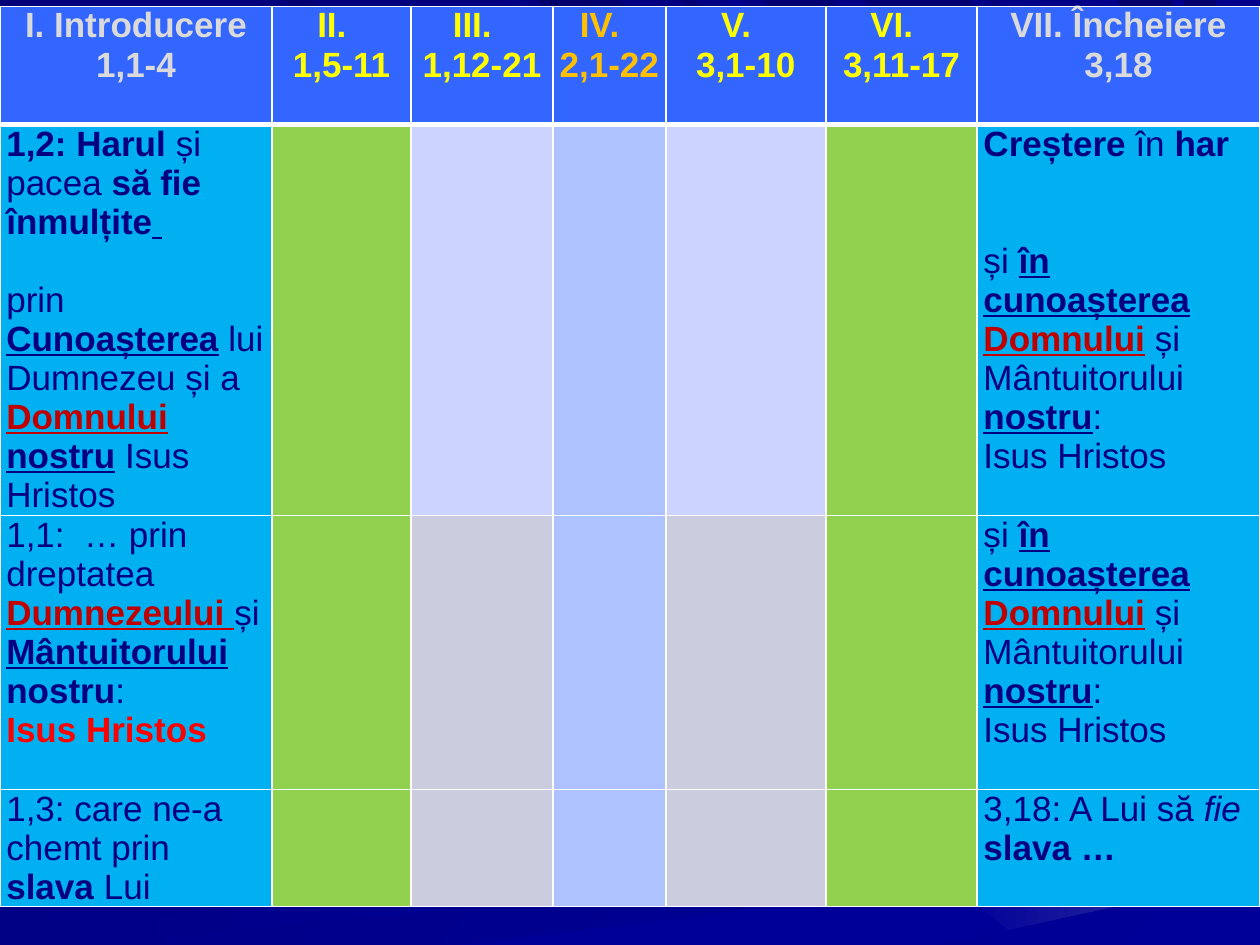
from dataclasses import dataclass

from lxml.etree import SubElement
from pptx import Presentation
from pptx.dml.color import RGBColor
from pptx.enum.text import PP_ALIGN as Align
from pptx.oxml.ns import qn
from pptx.util import Pt


def blue(level: int) -> RGBColor:
    return RGBColor(0, 0, level)


NAVY = blue(0x80)
BRIGHT = blue(0x99)
LAVENDER_GREY = RGBColor(0x39, 0x39, 0x9E)
WHITE = RGBColor(0xFF, 0xFF, 0xFF)
SILVER = RGBColor(0xDA, 0xDA, 0xDA)
YELLOW = RGBColor(0xFF, 0xFF, 0x00)
AMBER = RGBColor(0xFF, 0xC0, 0x00)
CRIMSON = RGBColor(0xC0, 0x00, 0x00)
RED = RGBColor(0xFF, 0x00, 0x00)
HEADER_BLUE = RGBColor(0x33, 0x66, 0xFF)
SKY = RGBColor(0x00, 0xB0, 0xF0)
GREEN = RGBColor(0x92, 0xD0, 0x50)
PALE_BLUE = RGBColor(0xCD, 0xD3, 0xFF)
PALE_GREY = RGBColor(0xCC, 0xCC, 0xDF)
MID_BLUE = RGBColor(0xAD, 0xC2, 0xFF)

FONT = "Arial"
TEXT_SIZE = 20
LINE = 22.35  # height of one text line
COLUMN_WIDTHS = (155.5, 79.5, 81, 64.5, 91.5, 86.5, 161.5)
ROW_HEIGHTS = (67.5, 223.5, 156.5, 67)


@dataclass
class Ray:
    start: RGBColor
    end: RGBColor
    angle: int
    points: list[tuple[float, float]]


@dataclass
class Run:
    text: str
    bold: bool = False
    underline: bool = False
    italic: bool = False
    color: RGBColor = NAVY


@dataclass
class Para:
    runs: list[Run]
    before: float = 0
    align: Align = Align.LEFT


# Background rays that reach past the table
RAYS = [
    Ray(blue(0x7B), BRIGHT, 45, [(415.5, 214.5), (72.7, 0), (18.7, 0), (405.4, 223.2),
                                 (720, 405.4), (720, 404.6)]),
    Ray(blue(0x85), BRIGHT, 0, [(0, 540), (38.9, 540), (452.2, 501.8), (452.2, 496.1), (0, 529.2)]),
    Ray(BRIGHT, BRIGHT, 0, [(534.2, 540), (576.7, 530.6), (544.3, 505.4), (262.1, 540)]),
    Ray(BRIGHT, LAVENDER_GREY, 0, [(720, 499.7), (720, 483.8), (544.3, 505.4), (576, 531.4)]),
    Ray(blue(0x83), BRIGHT, 45, [(286.6, 0), (679.7, 340.6), (681.8, 337.7), (299.5, 0)]),
    Ray(blue(0x6D), BRIGHT, 45, [(306.7, 0), (684.7, 334.8), (697, 323.3), (354.2, 0)]),
    Ray(blue(0x73), BRIGHT, 45, [(388.8, 0), (703.4, 316.8), (397.4, 0)]),
    Ray(blue(0x73), NAVY, 90, [(436.3, 0), (709.2, 310.3), (710.6, 309.6), (475.9, 0)]),
    Ray(blue(0x6B), NAVY, 90, [(638.6, 0), (700.6, 130.3), (709.9, 106.6), (669.6, 0)]),
    Ray(blue(0x6D), NAVY, 90, [(694.1, 0), (676.1, 0), (712.1, 99.4), (719.3, 81.4)]),
    Ray(blue(0x70), BRIGHT, 45, [(162, 0), (719.3, 397.4), (719.3, 393.8), (177.8, 0)]),
    Ray(blue(0x8E), BRIGHT, 45, [(415.4, 0), (719.3, 326.9), (719.3, 326.2), (423.4, 0)]),
    Ray(blue(0x73), NAVY, 90, [(554.4, 0), (493.9, 0), (719.3, 308.2), (719.3, 280.8)]),
    Ray(blue(0x78), BRIGHT, 45, [(565.2, 0), (719.3, 259.2), (719.3, 254.9), (570.2, 0)]),
    Ray(blue(0x85), BRIGHT, 45, [(586.8, 0), (719.3, 241.9), (719.3, 241.2), (593.3, 0)]),
    Ray(blue(0x8A), BRIGHT, 45, [(719.3, 179.3), (627.8, 0), (622.8, 0), (719.3, 185.8)]),
]

# Table content
HEADINGS = [
    ("I. Introducere", "1,1-4", SILVER),
    ("II.  ", "1,5-11", YELLOW),
    ("III.  ", "1,12-21", YELLOW),
    ("IV.  ", "2,1-22", AMBER),
    ("V.  ", "3,1-10", YELLOW),
    ("VI.  ", "3,11-17", YELLOW),
    ("VII. Încheiere", "3,18", SILVER),
]
KNOWLEDGE = [
    Run("și "), Run("în cunoașterea", bold=True, underline=True), Run(" "),
    Run("Domnului", bold=True, underline=True, color=CRIMSON), Run(" și Mântuitorului "),
    Run("nostru", bold=True, underline=True), Run(":"),
]
CHRIST = Para([Run("Isus Hristos")])
INTRODUCTION = [
    [Para([Run("1,2: Harul ", bold=True), Run("și pacea "), Run("să fie înmulțite", bold=True),
           Run(" ", bold=True, underline=True)]),
     Para([Run("prin "), Run("Cunoașterea", bold=True, underline=True),
           Run(" lui Dumnezeu și a "),
           Run("Domnului", bold=True, underline=True, color=CRIMSON),
           Run(" nostru", bold=True, underline=True), Run(" Isus Hristos")], before=LINE)],
    [Para([Run("1,1:  … prin dreptatea "),
           Run("Dumnezeului ", bold=True, underline=True, color=CRIMSON), Run("și "),
           Run("Mântuitorului ", bold=True, underline=True), Run("nostru", bold=True), Run(":")]),
     Para([Run("Isus Hristos", bold=True, color=RED)])],
    [Para([Run("1,3: care ne-a chemt prin "), Run("slava ", bold=True), Run("Lui")])],
]
CONCLUSION = [
    [Para([Run("Creștere ", bold=True), Run("în "), Run("har", bold=True)]),
     Para(KNOWLEDGE, before=2 * LINE), CHRIST],
    [Para(KNOWLEDGE), CHRIST],
    [Para([Run("3,18: A Lui să "), Run("fie ", italic=True), Run("slava …", bold=True)])],
]


def fill_gradient(fill, start: RGBColor, end: RGBColor, angle: int) -> None:
    fill.gradient()
    fill.gradient_angle = -angle % 360
    for stop, color in zip(fill.gradient_stops, (start, end)):
        stop.color.rgb = color


def draw_ray(slide, ray: Ray) -> None:
    first, *rest = [(Pt(x), Pt(y)) for x, y in ray.points]
    builder = slide.shapes.build_freeform(*first)
    builder.add_line_segments(rest, close=True)
    shape = builder.convert_to_shape()
    shape.shadow.inherit = False
    shape.line.fill.background()
    if ray.start == ray.end:
        shape.fill.solid()
        shape.fill.fore_color.rgb = ray.start
    else:
        fill_gradient(shape.fill, ray.start, ray.end, ray.angle)


def add_text(paragraph, text: str, *, bold: bool, underline: bool, italic: bool,
             color: RGBColor) -> None:
    run = paragraph.add_run()
    run.text = text
    font = run.font
    font.name, font.size = FONT, Pt(TEXT_SIZE)
    font.bold, font.underline, font.italic = bold, underline, italic
    font.color.rgb = color


def draw_cell(cell, fill: RGBColor, paras: list[Para], top: float, bottom: float) -> None:
    properties = cell._tc.get_or_add_tcPr()
    for side, width in (("L", 1), ("R", 1), ("T", top), ("B", bottom)):
        border = SubElement(properties, qn(f"a:ln{side}"), w=str(Pt(width)))
        SubElement(SubElement(border, qn("a:solidFill")), qn("a:srgbClr"), val=str(WHITE))
    cell.fill.solid()
    cell.fill.fore_color.rgb = fill
    cell.margin_left = cell.margin_right = Pt(3.6)
    cell.margin_top = cell.margin_bottom = 0
    frame = cell.text_frame
    for index, para in enumerate(paras):
        paragraph = frame.add_paragraph() if index else frame.paragraphs[0]
        paragraph.alignment = para.align
        if para.before:
            paragraph.space_before = Pt(para.before)
        for run in para.runs:
            add_text(paragraph, run.text, bold=run.bold, underline=run.underline,
                     italic=run.italic, color=run.color)


def draw_outline(slide) -> None:
    outline = slide.shapes.add_table(
        len(ROW_HEIGHTS), len(COLUMN_WIDTHS), 0, Pt(3.6),
        Pt(sum(COLUMN_WIDTHS)), Pt(sum(ROW_HEIGHTS))).table
    for column, width in zip(outline.columns, COLUMN_WIDTHS):
        column.width = Pt(width)
    for row, height in zip(outline.rows, ROW_HEIGHTS):
        row.height = Pt(height)

    for column, (title, verses, color) in enumerate(HEADINGS):
        heading = [Para([Run(text, bold=True, color=color)], align=Align.CENTER)
                   for text in (title, verses)]
        draw_cell(outline.cell(0, column), HEADER_BLUE, heading, 1, 3)

    for row, (left, right) in enumerate(zip(INTRODUCTION, CONCLUSION), start=1):
        pale = PALE_BLUE if row == 1 else PALE_GREY
        fills = (SKY, GREEN, pale, MID_BLUE, pale, GREEN, SKY)
        texts = (left, [], [], [], [], [], right)
        for column, (fill, paras) in enumerate(zip(fills, texts)):
            draw_cell(outline.cell(row, column), fill, paras, 3 if row == 1 else 1, 1)


def main() -> None:
    deck = Presentation()
    deck.slide_width, deck.slide_height = Pt(720), Pt(540)
    slide = deck.slides.add_slide(deck.slide_layouts[6])
    fill_gradient(slide.background.fill, blue(0x78), BRIGHT, 45)
    for ray in RAYS:
        draw_ray(slide, ray)
    draw_outline(slide)
    deck.save("out.pptx")


if __name__ == "__main__":
    main()
